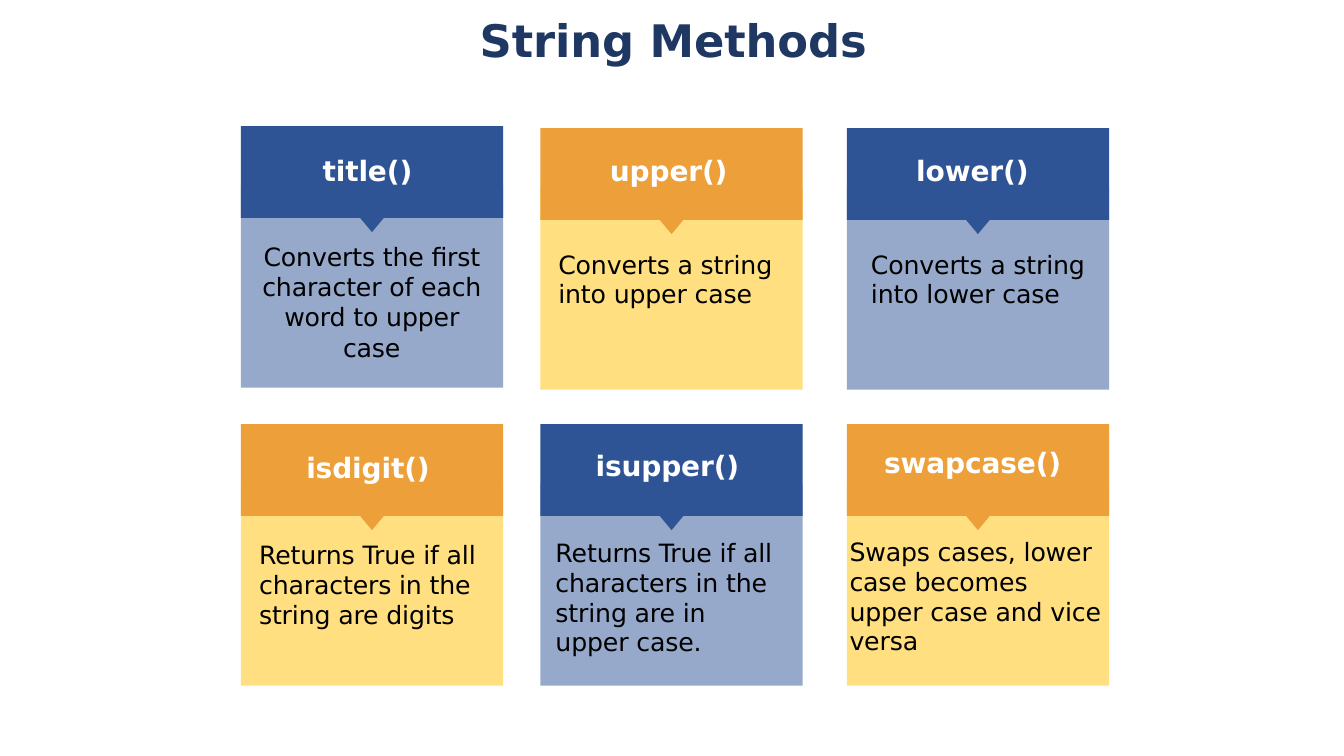
from lxml.etree import SubElement
from pptx import Presentation
from pptx.dml.color import RGBColor
from pptx.enum.shapes import MSO_SHAPE
from pptx.enum.text import MSO_ANCHOR, MSO_AUTO_SIZE, PP_ALIGN
from pptx.oxml.ns import qn
from pptx.util import Cm, Pt

NAVY = RGBColor(0x1F, 0x38, 0x63)
BLUE = RGBColor(0x2E, 0x54, 0x96)
ORANGE = RGBColor(0xED, 0xA0, 0x39)
YELLOW = RGBColor(0xFF, 0xC0, 0x00)
WHITE = RGBColor(0xFF, 0xFF, 0xFF)
BLACK = RGBColor(0x00, 0x00, 0x00)
FONT = "DejaVu Sans"

CARD_WIDTH = 6.61
BODY_OFFSET, BODY_HEIGHT = 1.5, 5.09
HEADER_HEIGHT, POINTER_TIP, POINTER_HALF = 2.31, 2.67, 0.3
LEFT_COLUMN, MIDDLE_COLUMN, RIGHT_COLUMN = 6.07, 13.62, 21.34
FIRST_ROW, SECOND_ROW = 3.23, 10.69
BLUE_CARD, ORANGE_CARD = (BLUE, BLUE), (ORANGE, YELLOW)

CENTERED = (PP_ALIGN.CENTER, 1.0, 1, 0.03)
EXACT = (PP_ALIGN.LEFT, Pt(20.8), 2.4, 0.08)
TIGHT = (PP_ALIGN.LEFT, 0.98, 1.3, 0.05)
LABEL = (PP_ALIGN.LEFT, 1.0, 1, 0.03)

cards = [
    (LEFT_COLUMN, FIRST_ROW - 0.05, BLUE_CARD,
     "title()", (8.13, 3.84, 2.44, 0.89),
     "Converts the first character of each word to upper case", (6.55, 6.05, 5.64, 3.07), CENTERED),
    (MIDDLE_COLUMN, FIRST_ROW, ORANGE_CARD,
     "upper()", (15.37, 3.84, 3.15, 0.89),
     "Converts a string into upper case", (14.07, 6.22, 5.54, 1.55), EXACT),
    (RIGHT_COLUMN, FIRST_ROW, BLUE_CARD,
     "lower()", (23.09, 3.84, 3.07, 0.89),
     "Converts a string into lower case", (21.95, 6.22, 5.54, 1.55), EXACT),
    (LEFT_COLUMN, SECOND_ROW, ORANGE_CARD,
     "isdigit()", (7.72, 11.33, 3.3, 0.89),
     "Returns True if all characters in the string are digits", (6.53, 13.59, 5.72, 2.29), TIGHT),
    (MIDDLE_COLUMN, SECOND_ROW, BLUE_CARD,
     "isupper()", (15.01, 11.28, 3.81, 0.89),
     "Returns True if all characters in the string are in upper case.", (14, 13.54, 5.72, 3.02), TIGHT),
    (RIGHT_COLUMN, SECOND_ROW, ORANGE_CARD,
     "swapcase()", (22.28, 11.2, 4.7, 0.89),
     "Swaps cases, lower case becomes upper case and vice versa", (21.41, 13.51, 6.45, 3.02), TIGHT),
]


def write_text(shape, text, size, color, bold, style):
    alignment, line_spacing, space_before, top_margin = style
    frame = shape.text_frame
    frame.word_wrap = True
    frame.auto_size = MSO_AUTO_SIZE.NONE
    frame.vertical_anchor = MSO_ANCHOR.TOP
    frame.margin_left = frame.margin_right = frame.margin_bottom = 0
    frame.margin_top = Cm(top_margin)
    paragraph = frame.paragraphs[0]
    paragraph.alignment = alignment
    paragraph.line_spacing = line_spacing
    paragraph.space_before = Pt(space_before)
    paragraph.font.name = FONT
    paragraph.font.size = Pt(size)
    paragraph.font.bold = bold
    paragraph.font.color.rgb = color
    run = paragraph.add_run()
    run.text = text
    run._r.get_or_add_rPr().set("spc", "-10")


def paint(shape, color):
    shape.shadow.inherit = False
    shape.fill.solid()
    shape.fill.fore_color.rgb = color
    shape.line.fill.background()


presentation = Presentation()
presentation.slide_width = Cm(33.87)
presentation.slide_height = Cm(19.05)
slide = presentation.slides.add_slide(presentation.slide_layouts[5])

title = slide.shapes.title
title.left, title.top, title.width, title.height = Cm(3), Cm(0.28), Cm(27.89), Cm(3.23)
write_text(title, "String Methods", 32, NAVY, True, LABEL)
title.text_frame.margin_left = Cm(9.09)

for left, top, (header_color, body_color), name, name_box, description, description_box, style in cards:
    body = slide.shapes.add_shape(MSO_SHAPE.RECTANGLE, Cm(left), Cm(top + BODY_OFFSET),
                                  Cm(CARD_WIDTH), Cm(BODY_HEIGHT))
    paint(body, body_color)
    color_element = body._element.spPr.find(qn("a:solidFill"))[0]
    SubElement(color_element, qn("a:alpha")).set("val", "50000")

    right, middle, edge = left + CARD_WIDTH, left + CARD_WIDTH / 2, top + HEADER_HEIGHT
    outline = [(left, top), (left, edge), (middle - POINTER_HALF, edge),
               (middle, top + POINTER_TIP), (middle + POINTER_HALF, edge), (right, edge)]
    builder = slide.shapes.build_freeform(Cm(right), Cm(top))
    builder.add_line_segments([(Cm(x), Cm(y)) for x, y in outline], close=True)
    paint(builder.convert_to_shape(), header_color)

    name_shape = slide.shapes.add_textbox(*map(Cm, name_box))
    write_text(name_shape, name, 20, WHITE, True, LABEL)
    description_shape = slide.shapes.add_textbox(*map(Cm, description_box))
    write_text(description_shape, description, 18, BLACK, False, style)

presentation.save("out.pptx")
